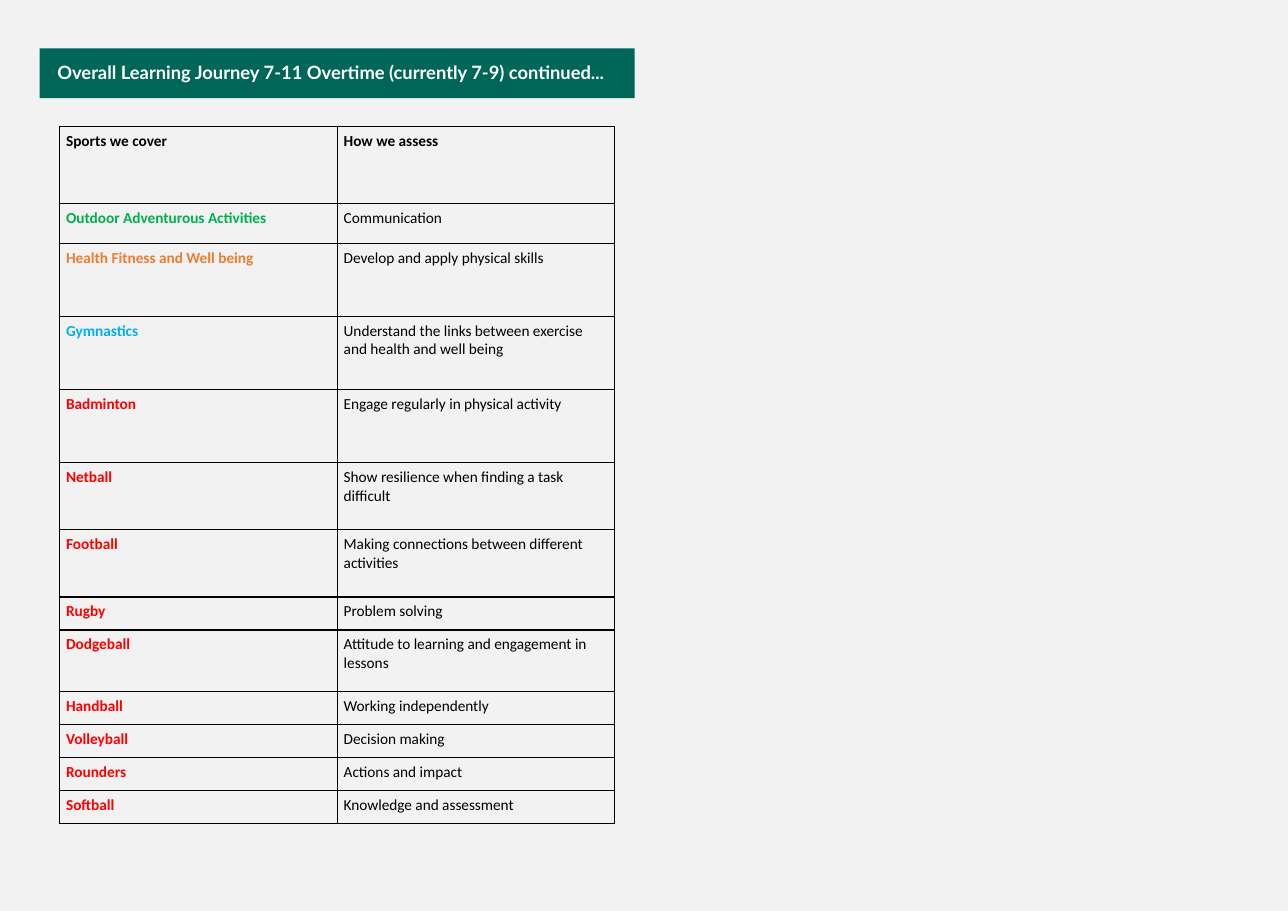
from dataclasses import dataclass

from lxml.etree import SubElement
from pptx import Presentation
from pptx.dml.color import RGBColor
from pptx.enum.text import MSO_ANCHOR, MSO_AUTO_SIZE, PP_ALIGN
from pptx.oxml.ns import qn
from pptx.util import Pt

EMU_PER_PX = 9144


@dataclass(frozen=True)
class Theme:
    background: str = "F2F2F2"
    banner: str = "006758"
    banner_text: str = "FFFFFF"
    ink: str = "000000"
    outdoor: str = "00B050"
    fitness: str = "ED7D31"
    gymnastics: str = "00B0F0"
    games: str = "FF0000"
    heading_font: str = "Lato"
    table_font: str = "Calibri"
    heading_size: int = 12
    table_size: int = 10
    border_width: float = 0.86


THEME = Theme()
HEADING = "Overall Learning Journey 7-11 Overtime (currently 7-9) continued..."
COLUMN_HEADS = ("Sports we cover", "How we assess")
# Sport, its colour, what is assessed, row height in px
SPORTS = [
    ("Outdoor Adventurous Activities", THEME.outdoor, "Communication", 36),
    ("Health Fitness and Well being", THEME.fitness, "Develop and apply physical skills", 66),
    ("Gymnastics", THEME.gymnastics,
     "Understand the links between exercise and health and well being", 67),
    ("Badminton", THEME.games, "Engage regularly in physical activity", 66),
    ("Netball", THEME.games, "Show resilience when finding a task difficult", 61),
    ("Football", THEME.games, "Making connections between different activities", 61),
    ("Rugby", THEME.games, "Problem solving", 30),
    ("Dodgeball", THEME.games, "Attitude to learning and engagement in lessons", 56),
    ("Handball", THEME.games, "Working independently", 30),
    ("Volleyball", THEME.games, "Decision making", 30),
    ("Rounders", THEME.games, "Actions and impact", 30),
    ("Softball", THEME.games, "Knowledge and assessment", 30),
]
HEAD_HEIGHT = 70
COLUMN_WIDTH = 252


def px(length):
    return length * EMU_PER_PX


def apply(target, formats):
    for name, value in formats.items():
        setattr(target, name, value)


def set_margins(target, left, top, right, bottom):
    apply(target, {"margin_left": px(left), "margin_top": px(top),
                   "margin_right": px(right), "margin_bottom": px(bottom)})


def style_font(font, face, size, color, bold):
    apply(font, {"name": face, "size": Pt(size), "bold": bold})
    font.color.rgb = RGBColor.from_string(color)


def add_heading(slide):
    banner = slide.shapes.title
    apply(banner, {"left": px(36), "top": px(44), "width": px(540), "height": px(45)})
    banner.fill.solid()
    banner.fill.fore_color.rgb = RGBColor.from_string(THEME.banner)
    frame = banner.text_frame
    apply(frame, {"text": HEADING, "word_wrap": True, "auto_size": MSO_AUTO_SIZE.NONE,
                  "vertical_anchor": MSO_ANCHOR.MIDDLE})
    set_margins(frame, 16, 5, 10, 5)
    paragraph = frame.paragraphs[0]
    apply(paragraph, {"alignment": PP_ALIGN.LEFT, "line_spacing": 0.9, "space_before": Pt(11)})
    style_font(paragraph.runs[0].font, THEME.heading_font, THEME.heading_size,
               THEME.banner_text, True)


def add_borders(cell):
    properties = cell._tc.get_or_add_tcPr()
    for side in ("lnL", "lnR", "lnT", "lnB"):
        border = SubElement(properties, qn(f"a:{side}"), w=str(Pt(THEME.border_width)))
        fill = SubElement(border, qn("a:solidFill"))
        SubElement(fill, qn("a:srgbClr"), val=THEME.ink)


def fill_cell(cell, text, color, bold):
    add_borders(cell)
    cell.fill.background()
    set_margins(cell, 6, 5, 6, 5)
    cell.text = text
    style_font(cell.text_frame.paragraphs[0].runs[0].font, THEME.table_font,
               THEME.table_size, color, bold)


def add_sports_table(slide):
    heights = [HEAD_HEIGHT] + [height for *_, height in SPORTS]
    table = slide.shapes.add_table(len(heights), 2, px(54), px(115),
                                   px(2 * COLUMN_WIDTH), px(sum(heights))).table
    apply(table, {"first_row": False, "horz_banding": False})
    for column in table.columns:
        column.width = px(COLUMN_WIDTH)
    for row, height in zip(table.rows, heights):
        row.height = px(height)
    for column, head in enumerate(COLUMN_HEADS):
        fill_cell(table.cell(0, column), head, THEME.ink, True)
    for row, (sport, color, assessment, _) in enumerate(SPORTS, start=1):
        fill_cell(table.cell(row, 0), sport, color, True)
        fill_cell(table.cell(row, 1), assessment, THEME.ink, False)


def main():
    deck = Presentation()
    apply(deck, {"slide_width": px(1169), "slide_height": px(827)})
    slide = deck.slides.add_slide(deck.slide_layouts.get_by_name("Title Only"))
    slide.background.fill.solid()
    slide.background.fill.fore_color.rgb = RGBColor.from_string(THEME.background)
    add_heading(slide)
    add_sports_table(slide)
    deck.save("out.pptx")


if __name__ == "__main__":
    main()
